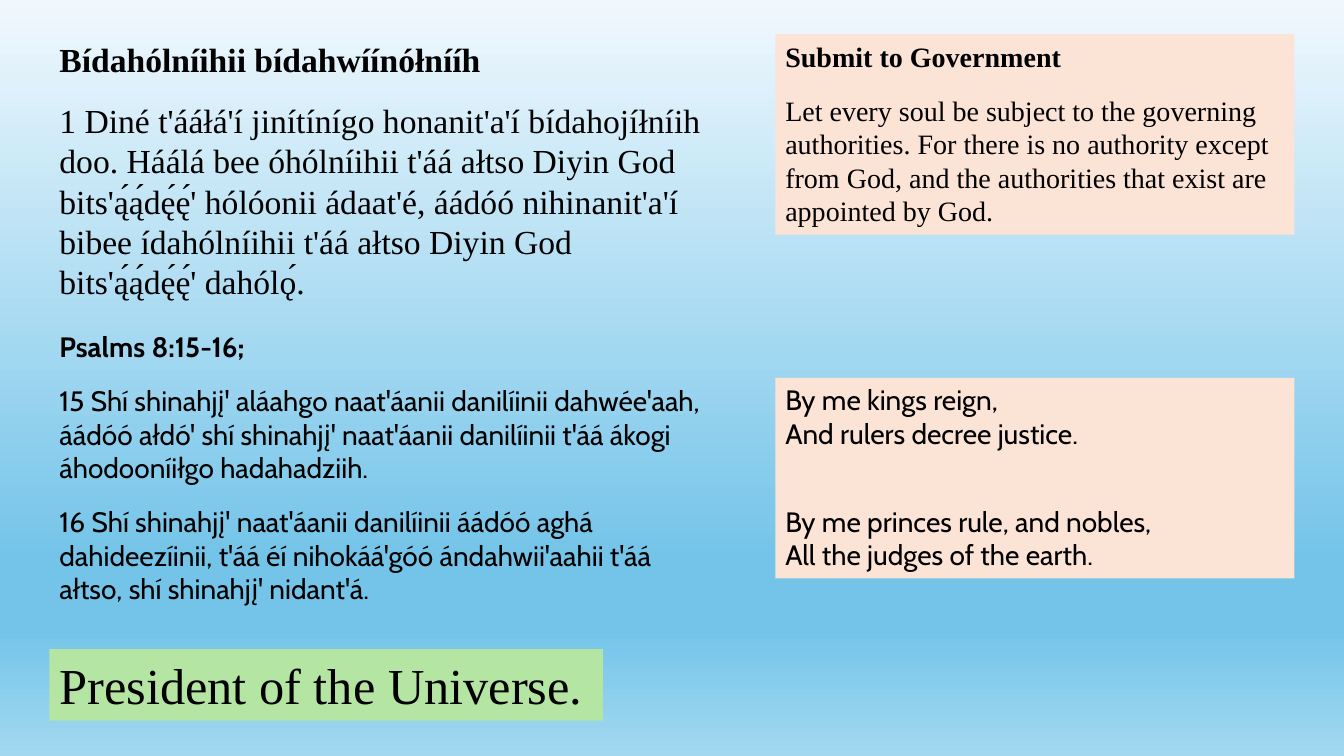
from copy import deepcopy

from pptx import Presentation
from pptx import util as u
from pptx.dml.color import RGBColor
from pptx.enum import shapes, text
from pptx.oxml.ns import qn

WIDTH, HEIGHT = u.Inches(13.33), u.Inches(7.5)
SERIF, SANS = "Times New Roman", "Cabin"
PEACH, GREEN, BLACK = "FBE3D6", "B4E5A2", "000000"
SKY = [(0, "F0F8FD"), (0.74, "74C4E9"), (0.83, "74C4E9"), (1, "A2D8F0")]

# Columns and rows, in percent of the slide's size
LEFT, RIGHT = 3.68, 57.69
LEFT_W, RIGHT_W, BANNER_W = 50, 38.63, 41.18
TOP, PSALM, KINGS, BANNER = 4.53, 42.93, 50, 85.87
PANEL_H = 26.53

# Space before a paragraph, in points
GAP, VERSE_GAP = 14.5, 38.5


def color(value):
    return RGBColor.from_string(value)


def paint_sky(slide):
    """Vertical gradient behind everything."""
    fill = slide.background.fill
    fill.gradient()
    fill.gradient_angle = 270
    stops = next(slide.element.iter(qn("a:gsLst")))
    for _ in SKY[2:]:
        stops.append(deepcopy(stops[0]))
    for stop, (position, value) in zip(fill.gradient_stops, SKY):
        stop.position = position
        stop.color.rgb = color(value)


def write(sp, paragraphs, font, size):
    """Fill a shape with (text, bold, space before) paragraphs."""
    tf = sp.text_frame
    frame = {"word_wrap": True, "vertical_anchor": text.MSO_ANCHOR.TOP,
             "auto_size": text.MSO_AUTO_SIZE.SHAPE_TO_FIT_TEXT}
    for name, value in frame.items():
        setattr(tf, name, value)
    for i, (words, bold, gap) in enumerate(paragraphs):
        p = tf.add_paragraph() if i else tf.paragraphs[0]
        p.alignment = text.PP_ALIGN.LEFT
        p.space_before = u.Pt(gap)
        r = p.add_run()
        r.text = words
        for name, value in {"name": font, "size": u.Pt(size), "bold": bold}.items():
            setattr(r.font, name, value)
        r.font.color.rgb = color(BLACK)


def place(x, y, w, h):
    return [int(share * side / 100) for share, side in
            ((x, WIDTH), (y, HEIGHT), (w, WIDTH), (h, HEIGHT))]


def add_passage(slide, box, paragraphs, font, size):
    write(slide.shapes.add_textbox(*place(*box)), paragraphs, font, size)


def add_panel(slide, box, fill, paragraphs, font, size):
    sp = slide.shapes.add_shape(shapes.MSO_SHAPE.RECTANGLE, *place(*box))
    sp.shadow.inherit = False
    sp.fill.solid()
    sp.fill.fore_color.rgb = color(fill)
    sp.line.fill.background()
    write(sp, paragraphs, font, size)


def main():
    prs = Presentation()
    prs.slide_width, prs.slide_height = WIDTH, HEIGHT
    slide = prs.slides.add_slide(prs.slide_layouts[6])
    paint_sky(slide)

    # Government passage, Navajo and English
    add_passage(slide, (LEFT, TOP, LEFT_W, 36.4), [
        ("Bídahólníihii bídahwíínółnííh", True, 0),
        ("1 Diné t'ááłá'í jinítínígo honanit'a'í bídahojíłníih doo. "
         "Háálá bee óhólníihii t'áá ałtso Diyin God bits'ą́ą́dę́ę́' hólóonii "
         "ádaat'é, áádóó nihinanit'a'í bibee ídahólníihii t'áá ałtso "
         "Diyin God bits'ą́ą́dę́ę́' dahólǫ́.", False, GAP),
    ], SERIF, 24)
    add_panel(slide, (RIGHT, TOP, RIGHT_W, PANEL_H), PEACH, [
        ("Submit to Government", True, 0),
        ("Let every soul be subject to the governing authorities. "
         "For there is no authority except from God, and the authorities "
         "that exist are appointed by God.", False, GAP),
    ], SERIF, 20)

    # Banner
    add_panel(slide, (LEFT, BANNER, BANNER_W, 9.47), GREEN,
              [("President of the Universe.", False, 0)], SERIF, 36)

    # Kings passage, English and Navajo
    add_panel(slide, (RIGHT, KINGS, RIGHT_W, PANEL_H), PEACH, [
        ("By me kings reign,", False, 0),
        ("And rulers decree justice.", False, 0),
        ("By me princes rule, and nobles,", False, VERSE_GAP),
        ("All the judges of the earth.", False, 0),
    ], SANS, 20)
    add_passage(slide, (LEFT, PSALM, LEFT_W, 38.13), [
        ("Psalms 8:15-16;", True, 0),
        ("15 Shí shinahjį' aláahgo naat'áanii danilíinii dahwée'aah, "
         "áádóó ałdó' shí shinahjį' naat'áanii danilíinii t'áá ákogi "
         "áhodooníiłgo hadahadziih.", False, GAP),
        ("16 Shí shinahjį' naat'áanii danilíinii áádóó aghá dahideezíinii, "
         "t'áá éí nihokáá'góó ándahwii'aahii t'áá ałtso, "
         "shí shinahjį' nidant'á.", False, GAP),
    ], SANS, 20)

    prs.save("out.pptx")


if __name__ == "__main__":
    main()
